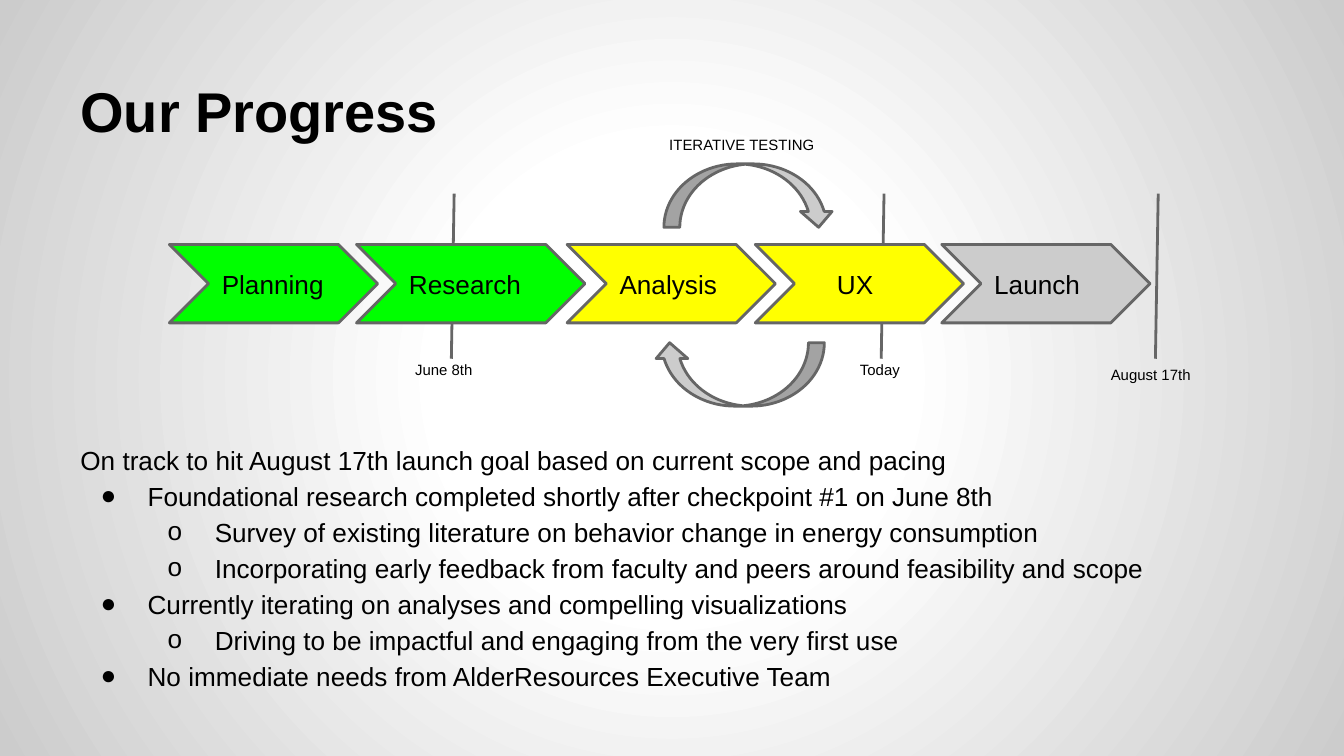
from pptx import Presentation
from pptx import util as u
from pptx.dml.color import RGBColor
from pptx.enum import shapes, text
from pptx.oxml import parse_xml
from pptx.oxml.ns import nsdecls
from lxml import etree

Pt = u.Pt
GREY, SILVER, BLACK = "666666", "CCCCCC", "000000"
A = "{http://schemas.openxmlformats.org/drawingml/2006/main}"


def color(code):
    return RGBColor.from_string(code)


def write(frame, words, size, anchor=text.MSO_ANCHOR.TOP, inset=7.2):
    """Fill a frame with (level, words) lines; levels 1 and 2 get bullets."""
    frame.word_wrap = True
    frame.vertical_anchor = anchor
    frame.margin_left = Pt(inset)
    frame.margin_right = frame.margin_top = frame.margin_bottom = Pt(7.2)
    for i, (level, line) in enumerate(words):
        para = frame.add_paragraph() if i else frame.paragraphs[0]
        para.alignment = text.PP_ALIGN.LEFT
        if len(words) > 1:
            para.line_spacing = 1.15
        if level:
            para.level = level - 1
            props = para._p.get_or_add_pPr()
            props.set("marL", str(Pt(36 * level)))
            props.set("indent", str(Pt(-25.2)))
            tint = etree.SubElement(props, A + "buClr")
            etree.SubElement(tint, A + "srgbClr", val=BLACK)
            etree.SubElement(props, A + "buFont", typeface="Arial")
            etree.SubElement(props, A + "buChar", char="●o"[level - 1])
        run = para.add_run()
        run.text = line
        run.font.name = "Arial"
        run.font.size = Pt(size)
        run.font.color.rgb = color(BLACK)


deck = Presentation()
deck.slide_width, deck.slide_height = Pt(720), Pt(405)
slide = deck.slides.add_slide(deck.slide_layouts[6])
items = slide.shapes

# Radial background, white in the middle
stops = "".join(
    f'<a:gs pos="{pos}000"><a:srgbClr val="{code}"/></a:gs>'
    for pos, code in [(0, "FFFFFF"), (30, "FFFFFF"), (100, SILVER)])
slide.element.cSld.insert(0, parse_xml(
    f'<p:bg {nsdecls("p", "a")}><p:bgPr><a:gradFill><a:gsLst>{stops}</a:gsLst>'
    '<a:path path="circle"><a:fillToRect l="50000" t="50000" r="50000" b="50000"/>'
    '</a:path></a:gradFill><a:effectLst/></p:bgPr></p:bg>'))

# Date lines, slightly slanted
for x in (473.6, 243.3, 620.5):
    mark = items.add_connector(shapes.MSO_CONNECTOR.STRAIGHT,
                               Pt(x), Pt(103.8), Pt(x - 1.5), Pt(192.2))
    mark.line.color.rgb = color(GREY)
    mark.line.width = Pt(1.5)
    etree.SubElement(mark._element.spPr, A + "effectLst")

# Title
title = items.add_textbox(Pt(36), Pt(16.6), Pt(648), Pt(67.5)).text_frame
write(title, [(0, "Our Progress")], 30, text.MSO_ANCHOR.BOTTOM)
title.paragraphs[0].runs[0].font.bold = True

# Phases and the two loop arrows
kind = shapes.MSO_SHAPE
parts = [
    (kind.CHEVRON, 90.7, 131, 111.6, 42, "00FF00", "Planning", 7.2),
    (kind.CHEVRON, 404.6, 131, 111.6, 42, "FFFF00", "UX", 22.8),
    (kind.CHEVRON, 303.8, 131, 111.6, 42, "FFFF00", "Analysis", 7.2),
    (kind.CHEVRON, 191, 131, 122.4, 42, "00FF00", "Research", 7.2),
    (kind.CHEVRON, 504.5, 131, 111.6, 42, SILVER, "Launch", 7.2),
    (kind.CURVED_DOWN_ARROW, 355.7, 87.8, 91.4, 34, SILVER, "", 0),
    (kind.CURVED_DOWN_ARROW, 350.2, 183.6, 91.4, 34, SILVER, "", 180),
]
for form, x, y, wide, high, fill, name, extra in parts:
    part = items.add_shape(form, Pt(x), Pt(y), Pt(wide), Pt(high))
    part.shadow.inherit = False
    part.fill.solid()
    part.fill.fore_color.rgb = color(fill)
    part.line.color.rgb = color(GREY)
    part.line.width = Pt(1.5)
    if name:
        write(part.text_frame, [(0, name)], 14, text.MSO_ANCHOR.MIDDLE, extra)
    else:
        part.rotation = extra

# Status notes
notes = [
    (0, "On track to hit August 17th launch goal based on current scope and pacing"),
    (1, "Foundational research completed shortly after checkpoint #1 on June 8th"),
    (2, "Survey of existing literature on behavior change in energy consumption"),
    (2, "Incorporating early feedback from faculty and peers around feasibility and scope"),
    (1, "Currently iterating on analyses and compelling visualizations"),
    (2, "Driving to be impactful and engaging from the very first use"),
    (1, "No immediate needs from AlderResources Executive Team"),
]
body = items.add_textbox(Pt(36), Pt(228.2), Pt(648), Pt(193))
write(body.text_frame, notes, 14)

# Small labels
for x, y, wide, label in [
    (453.6, 188.6, 91.4, "Today"),
    (588, 190.8, 91.4, "August 17th"),
    (351.4, 67.7, 101.5, "ITERATIVE TESTING"),
    (215.3, 188.6, 91.4, "June 8th"),
]:
    box = items.add_textbox(Pt(x), Pt(y), Pt(wide), Pt(23.8))
    write(box.text_frame, [(0, label)], 8)

deck.save("out.pptx")
